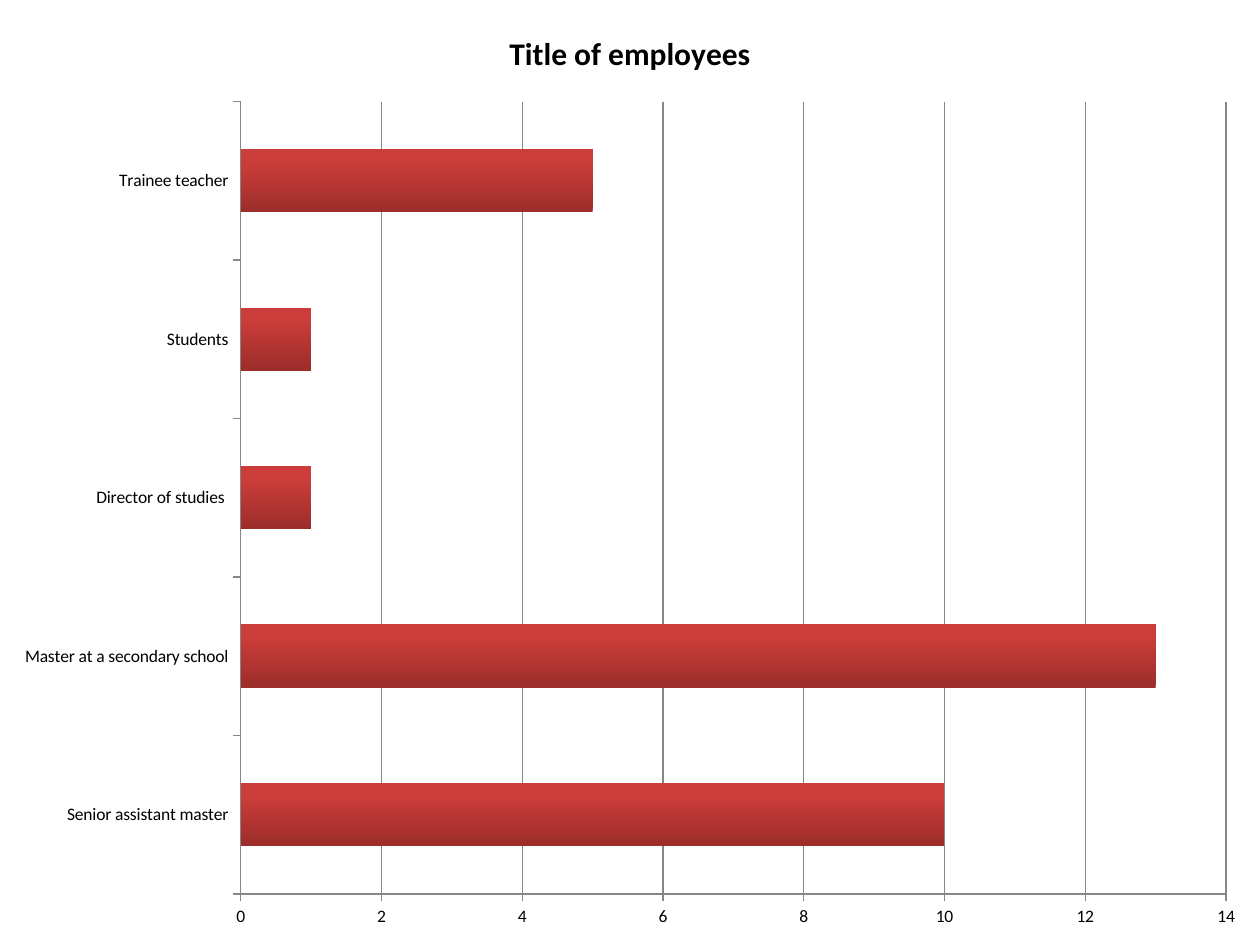
from typing import NamedTuple

from pptx import Presentation
from pptx.chart.data import CategoryChartData
from pptx.dml.color import RGBColor
from pptx.enum.chart import XL_CHART_TYPE as ChartType, XL_TICK_MARK as TickMark
from pptx.util import Pt

BLACK = RGBColor(0x00, 0x00, 0x00)
GREY = RGBColor(0x86, 0x86, 0x86)
DARK_RED = RGBColor(0x9B, 0x2D, 0x2A)
RED = RGBColor(0xCB, 0x3D, 0x3A)
WIDTH, HEIGHT = Pt(720), Pt(540)


class JobTitle(NamedTuple):
    label: str
    employees: int


JOB_TITLES = [
    JobTitle("Senior assistant master", 10),
    JobTitle("Master at a secondary school", 13),
    JobTitle("Director of studies ", 1),
    JobTitle("Students", 1),
    JobTitle("Trainee teacher", 5),
]


def style_line(line) -> None:
    line.color.rgb = GREY
    line.width = Pt(0.75)


def style_font(font, size: int, bold: bool) -> None:
    font.name = "Calibri"
    font.size = Pt(size)
    font.bold = bold
    font.color.rgb = BLACK


def style_bars(plot) -> None:
    plot.gap_width = 150
    plot.vary_by_categories = False
    fill = plot.series[0].format.fill
    fill.gradient()
    fill.gradient_angle = 90
    for stop, color, position in zip(fill.gradient_stops, (DARK_RED, RED), (0, 0.8)):
        stop.color.rgb = color
        stop.position = position


def add_employee_chart(slide) -> None:
    employee_data = CategoryChartData()
    employee_data.categories = [job.label for job in JOB_TITLES]
    employee_data.add_series("Series 1", [job.employees for job in JOB_TITLES])
    chart = slide.shapes.add_chart(
        ChartType.BAR_CLUSTERED, 0, 0, WIDTH, HEIGHT, employee_data
    ).chart
    style_font(chart.font, 10, False)
    chart.has_legend = False

    chart.has_title = True
    chart.chart_title.include_in_layout = False
    heading = chart.chart_title.text_frame.paragraphs[0]
    heading.text = "Title of employees"
    style_font(heading.font, 18, True)

    for axis in (chart.category_axis, chart.value_axis):
        axis.major_tick_mark = TickMark.OUTSIDE
        axis.minor_tick_mark = TickMark.NONE
        style_line(axis.format.line)
    chart.value_axis.minimum_scale = 0
    chart.value_axis.maximum_scale = 14
    chart.value_axis.major_unit = 2
    chart.value_axis.has_major_gridlines = True
    style_line(chart.value_axis.major_gridlines.format.line)
    style_bars(chart.plots[0])


def main() -> None:
    presentation = Presentation()
    presentation.slide_width, presentation.slide_height = WIDTH, HEIGHT
    add_employee_chart(presentation.slides.add_slide(presentation.slide_layouts[6]))
    presentation.save("out.pptx")


if __name__ == "__main__":
    main()
